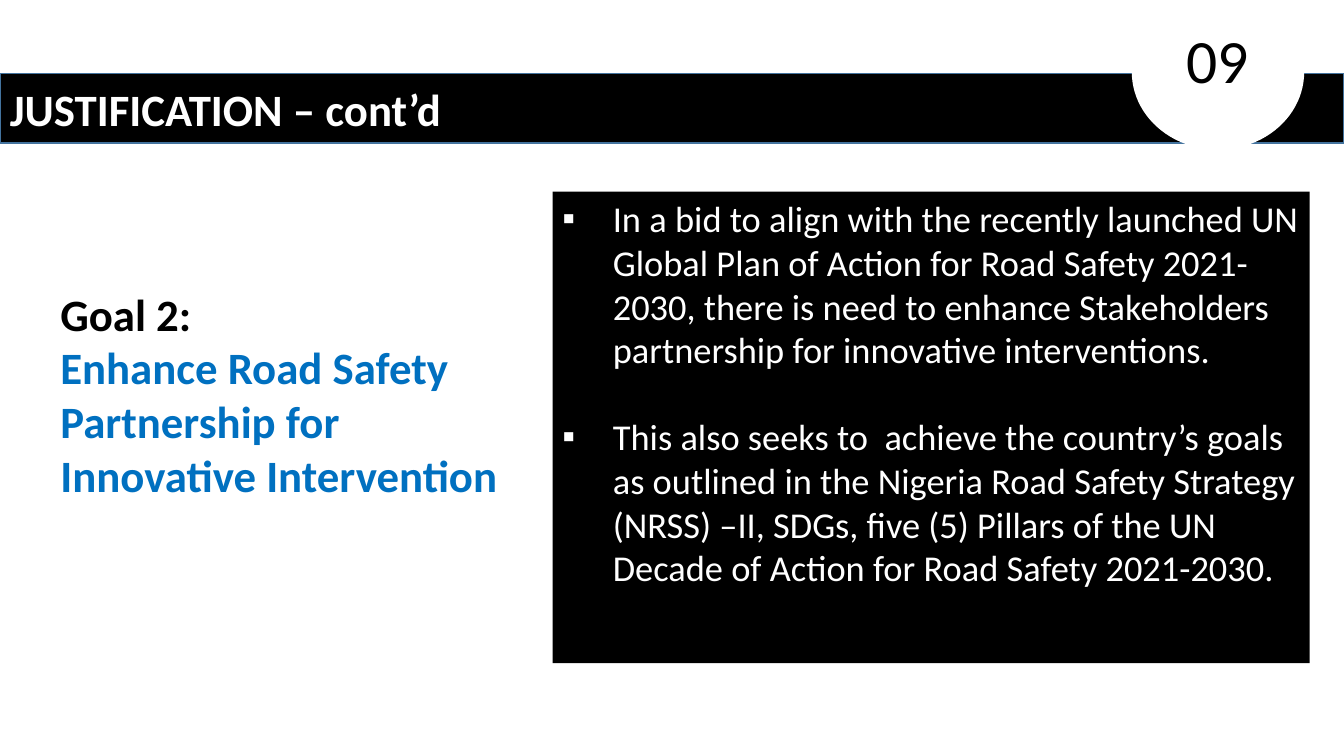
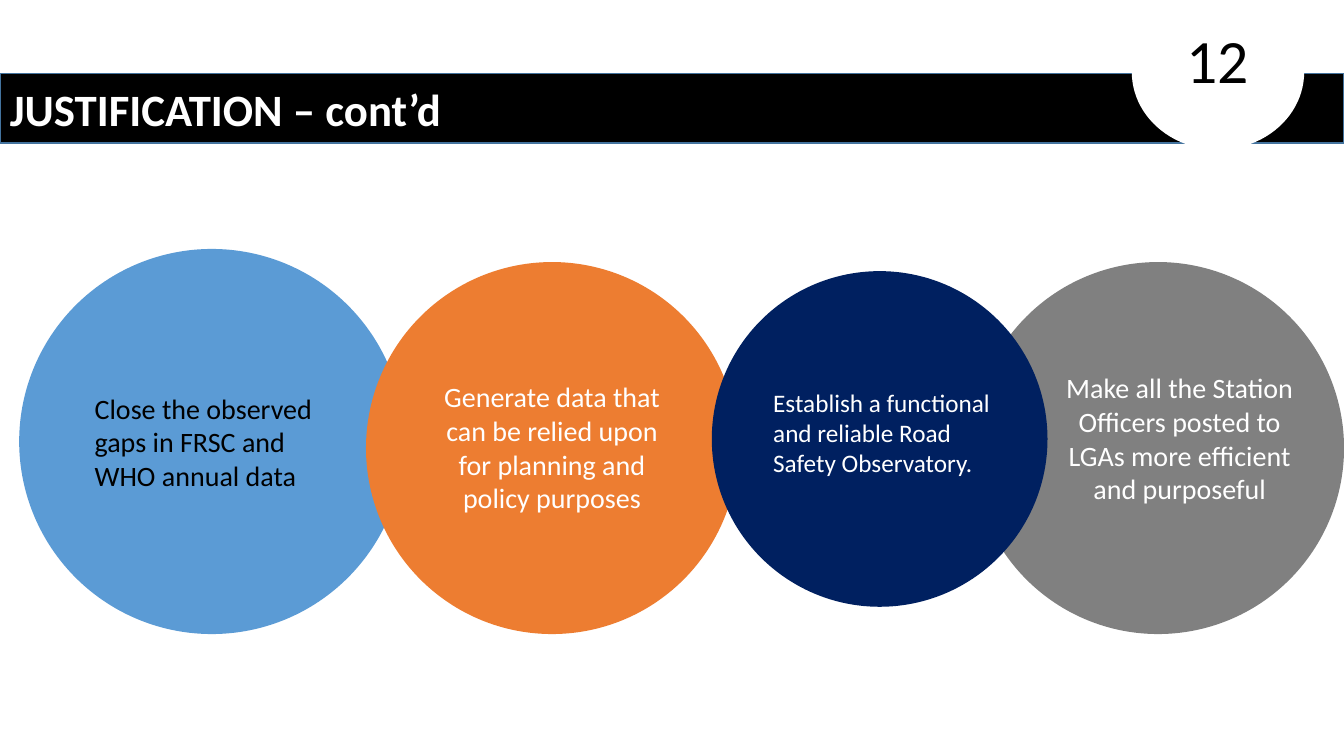
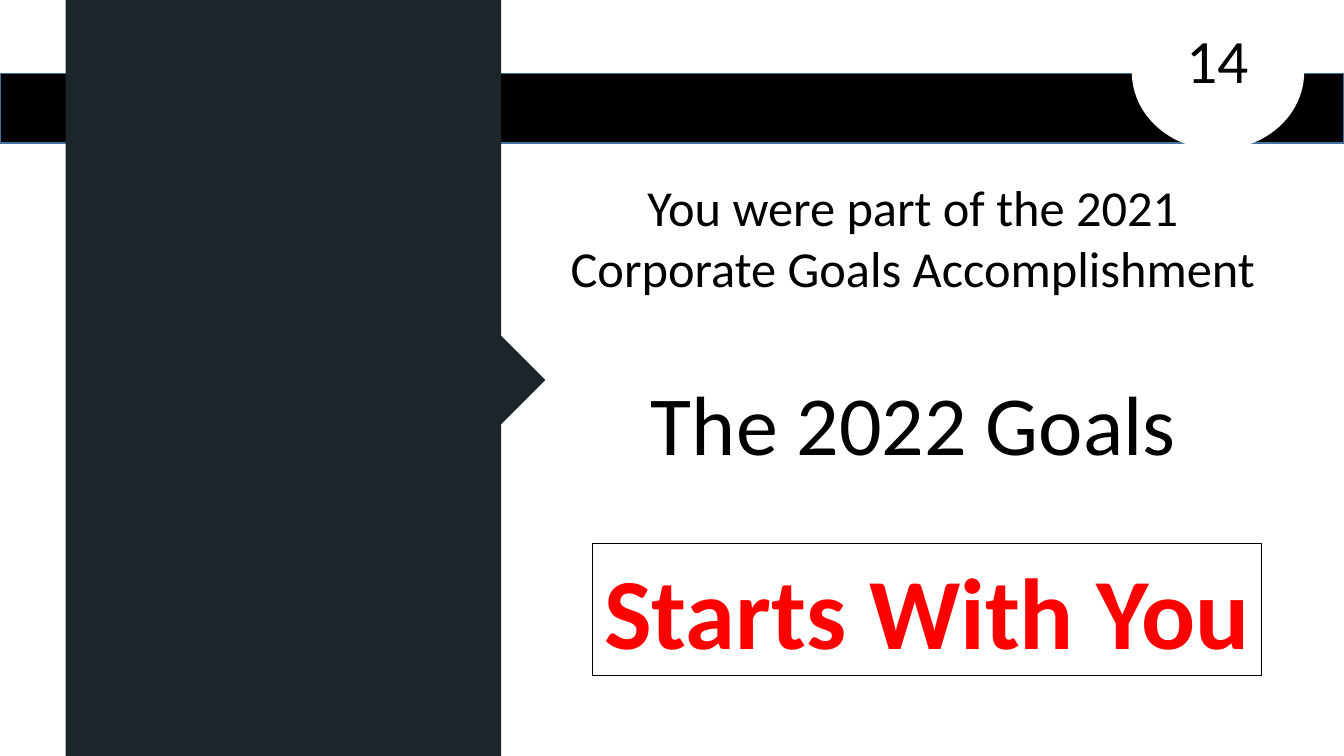
from lxml.etree import SubElement
from pptx import Presentation
from pptx.dml.color import RGBColor
from pptx.enum.shapes import MSO_SHAPE
from pptx.enum.text import MSO_ANCHOR, PP_ALIGN
from pptx.oxml.ns import qn
from pptx.util import Inches, Pt

WIDTH, HEIGHT = 13.33, 7.5
FONT = "Calibri"
COLORS = {
    "black": "000000", "white": "FFFFFF", "band_line": "43739E",
    "accent": "0070C0", "red": "FF0000", "panel": "1C2529",
    "sky": "5B9BD5", "orange": "ED7D31", "navy": "002060", "gray": "808080",
}
TITLE = {"size": 32, "bold": True}


def rgb(name):
    return RGBColor.from_string(COLORS[name])


def paint(sp, fill=None, line=None, line_width=1):
    sp.shadow.inherit = False
    if fill:
        sp.fill.solid()
        sp.fill.fore_color.rgb = rgb(fill)
    else:
        sp.fill.background()
    if line:
        sp.line.color.rgb = rgb(line)
        sp.line.width = Pt(line_width)
    else:
        sp.line.fill.background()


def add_shape(slide, kind, box, **look):
    sp = slide.shapes.add_shape(kind, *map(Inches, box))
    paint(sp, **look)
    return sp


def write(sp, paragraphs, align=PP_ALIGN.LEFT, anchor=MSO_ANCHOR.TOP, wrap=True):
    """Fill a shape with (text, colour, font format) paragraphs."""
    tf = sp.text_frame
    tf.word_wrap = wrap
    tf.vertical_anchor = anchor
    for i, (text, color, style) in enumerate(paragraphs):
        p = tf.paragraphs[0] if i == 0 else tf.add_paragraph()
        p.alignment = align
        r = p.add_run()
        r.text = text
        r.font.color.rgb = rgb(color)
        for name, value in {"name": FONT, **style}.items():
            setattr(r.font, name, Pt(value) if name == "size" else value)
    return tf


def add_text(slide, box, paragraphs, **layout):
    return write(slide.shapes.add_textbox(*map(Inches, box)), paragraphs, **layout)


def set_bullet(p, char, indent):
    pPr = p._p.get_or_add_pPr()
    pPr.set("marL", str(Inches(indent)))
    pPr.set("indent", str(-Inches(indent)))
    SubElement(pPr, qn("a:buFont"), typeface="Arial")
    SubElement(pPr, qn("a:buChar"), char=char)


def add_title_band(slide, title=None):
    band = add_shape(slide, MSO_SHAPE.RECTANGLE, (0, 0.73, WIDTH, 0.69),
                     fill="black", line="band_line")
    if title:
        write(band, [(title, "white", TITLE)], anchor=MSO_ANCHOR.MIDDLE)


def add_number_badge(slide, number):
    badge = add_shape(slide, MSO_SHAPE.FLOWCHART_DELAY, (11.31, -0.14, 1.54, 1.71),
                      fill="white")
    badge.rotation = 90
    add_text(slide, (11.67, 0.17, 0.82, 0.84), [(number, "black", {"size": 44})],
             wrap=False)


def add_bullet_panel(slide, box, items, size=26):
    panel = add_shape(slide, MSO_SHAPE.RECTANGLE, box, fill="black")
    tf = write(panel, [(item, "white", {"size": size}) for item in items])
    for i, p in enumerate(tf.paragraphs):
        set_bullet(p, "▪", 0.5)
        p.space_before = Pt(31 if i else 0)


def add_circle(slide, left, top, diameter, fill, caption):
    """Draw a circle; the caption's box is offset from the circle's corner."""
    add_shape(slide, MSO_SHAPE.OVAL, (left, top, diameter, diameter), fill=fill)
    dx, dy, width, height, text, color, size, align = caption
    add_text(slide, (left + dx, top + dy, width, height),
             [(text, color, {"size": size})], align=align)


def add_pointer_panel(slide, left, width, tip_y, reach):
    """Draw a full-height panel with a triangular pointer on its right edge."""
    add_shape(slide, MSO_SHAPE.RECTANGLE, (left, 0, width, HEIGHT), fill="panel")
    edge = left + width
    points = [(edge, tip_y - reach), (edge + reach, tip_y), (edge, tip_y + reach)]
    (x, y), *rest = [(Inches(px), Inches(py)) for px, py in points]
    builder = slide.shapes.build_freeform(x, y)
    builder.add_line_segments(rest, close=True)
    paint(builder.convert_to_shape(), fill="panel")


def build_goal(slide):
    add_title_band(slide, "JUSTIFICATION – cont’d")
    add_text(slide, (0.5, 2.79, 4.79, 2.21), [
        ("Goal 2:", "black", TITLE),
        ("Enhance Road Safety Partnership for Innovative Intervention", "accent", TITLE),
    ])
    add_bullet_panel(slide, (5.48, 1.9, 7.51, 4.68), [
        "In a bid to align with the recently launched UN Global Plan of Action for "
        "Road Safety 2021-2030, there is need to enhance Stakeholders partnership "
        "for innovative interventions.",
        "This also seeks to  achieve the country’s goals as outlined in the Nigeria "
        "Road Safety Strategy (NRSS) –II, SDGs, five (5) Pillars of the UN Decade of "
        "Action for Road Safety 2021-2030.",
    ])
    add_number_badge(slide, "09")


def build_circles(slide):
    add_title_band(slide, "JUSTIFICATION – cont’d")
    left, center = PP_ALIGN.LEFT, PP_ALIGN.CENTER
    circles = [
        (0.19, 2.47, 3.82, "sky",
         (0.65, 1.36, 2.43, 1.11, "Close the observed gaps in FRSC and WHO annual data",
          "black", 20, left)),
        (3.63, 2.6, 3.69, "orange",
         (0.54, 1.12, 2.61, 1.45,
          "Generate data that can be relied upon for planning and policy purposes",
          "white", 20, center)),
        (9.64, 2.6, 3.69, "gray",
         (0.82, 1.03, 2.48, 1.45,
          "Make all the Station Officers posted to LGAs more efficient and purposeful",
          "white", 20, center)),
        (7.06, 2.69, 3.33, "navy",
         (0.51, 1.1, 2.39, 1.01,
          "Establish a functional and reliable Road Safety Observatory.",
          "white", 18, left)),
    ]
    for circle in circles:
        add_circle(slide, *circle)
    add_number_badge(slide, "12")


def build_closing(slide):
    add_title_band(slide)
    add_pointer_panel(slide, 0.65, 4.32, 3.77, 0.44)
    center = PP_ALIGN.CENTER
    add_text(slide, (5.27, 1.7, 7.57, 1.31),
             [("You were part of the 2021 Corporate Goals Accomplishment", "black",
               {"size": 36})], align=center)
    add_text(slide, (5.88, 3.64, 6.36, 1.11),
             [("The 2022 Goals", "black", {"size": 60})], align=center)
    frame = add_shape(slide, MSO_SHAPE.RECTANGLE, (5.88, 5.39, 6.63, 1.31),
                      line="black", line_width=0.75)
    write(frame, [("Starts With You", "red", {"size": 72, "bold": True})], align=center)
    add_number_badge(slide, "14")


def main():
    prs = Presentation()
    prs.slide_width, prs.slide_height = Inches(WIDTH), Inches(HEIGHT)
    for build in (build_goal, build_circles, build_closing):
        build(prs.slides.add_slide(prs.slide_layouts[6]))
    prs.save("out.pptx")


if __name__ == "__main__":
    main()
